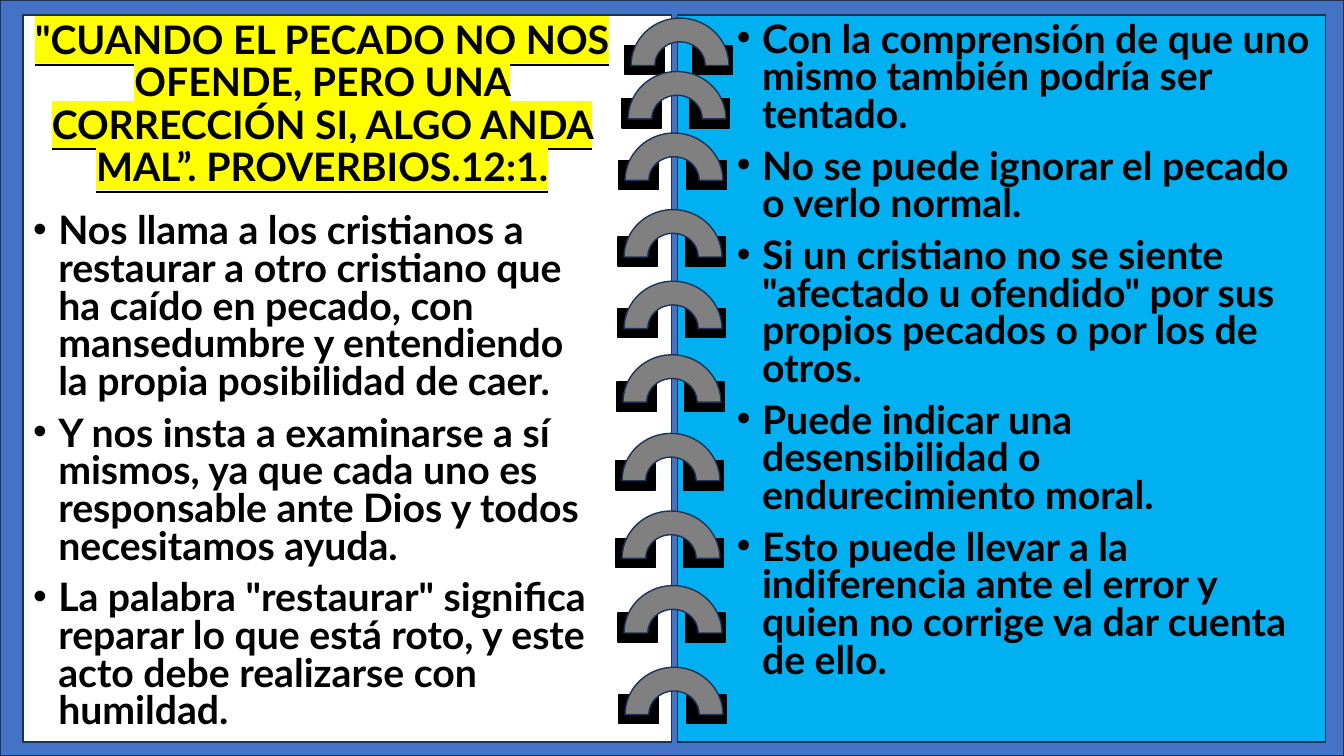
"""Build a slide that looks like an open ring binder with a verse and two bulleted pages."""
from lxml import etree
from pptx import Presentation
from pptx import util as u
from pptx.dml.color import RGBColor
from pptx.enum import shapes, text
from pptx.oxml.ns import qn

COLORS = {
    "cover": "4472C4", "left_page": "FFFFFF", "right_page": "00B0F0",
    "outline": "1E3256", "hole": "000000", "ring": "808080",
    "ink": "000000", "marker": "FFFF00",
}
RECTANGLE = shapes.MSO_SHAPE.RECTANGLE
BLOCK_ARC = shapes.MSO_SHAPE.BLOCK_ARC


def add_panel(parent, kind, left, top, width, height, fill, line="outline"):
    shape = parent.shapes.add_shape(
        kind, u.Inches(left), u.Inches(top), u.Inches(width), u.Inches(height))
    shape.shadow.inherit = False
    shape.fill.solid()
    shape.fill.fore_color.rgb = RGBColor.from_string(COLORS[fill])
    shape.line.color.rgb = RGBColor.from_string(COLORS[line])
    shape.line.width = u.Pt(1)


def add_text(slide, left, top, width, height, lines, spacing, before=0, bullet=None,
             align=text.PP_ALIGN.LEFT, anchor=text.MSO_ANCHOR.TOP,
             underline=None, highlight=None):
    box = slide.shapes.add_textbox(
        u.Inches(left), u.Inches(top), u.Inches(width), u.Inches(height))
    frame = box.text_frame
    frame.word_wrap = True
    frame.vertical_anchor = anchor
    for index, line in enumerate(lines):
        para = frame.add_paragraph() if index else frame.paragraphs[0]
        para.alignment = align
        para.line_spacing = spacing
        para.space_before = u.Pt(before)
        if bullet:
            props = para._p.get_or_add_pPr()
            props.set("marL", str(u.Inches(0.25)))
            props.set("indent", str(u.Inches(-0.25)))
            etree.SubElement(props, qn("a:buFont")).set("typeface", "Arial")
            etree.SubElement(props, qn("a:buChar")).set("char", bullet)
        span = para.add_run()
        span.text = line
        span.font.size = u.Pt(28)
        span.font.bold = True
        span.font.underline = underline
        span.font.color.rgb = RGBColor.from_string(COLORS["ink"])
        if highlight:
            marker = etree.SubElement(span._r.get_or_add_rPr(), qn("a:highlight"))
            etree.SubElement(marker, qn("a:srgbClr")).set("val", COLORS[highlight])
        span.font.name = "Lato"


deck = Presentation()
deck.slide_width = u.Inches(13.33)
deck.slide_height = u.Inches(7.5)
slide = deck.slides.add_slide(deck.slide_layouts[6])

add_panel(slide, RECTANGLE, 0, 0, 13.33, 7.5, "cover")
add_panel(slide, RECTANGLE, 6.72, 0.15, 6.43, 7.21, "right_page")
add_panel(slide, RECTANGLE, 0.23, 0.15, 6.43, 7.21, "left_page")

ring_positions = [
    (6.26, 0.18), (6.19, 2.79), (6.18, 3.52), (6.17, 4.3), (6.17, 5.07),
    (6.19, 5.81), (6.2, 6.62), (6.23, 0.71), (6.2, 1.32), (6.19, 2.08),
]
for left, top in ring_positions:
    ring = slide.shapes.add_group_shape()
    for offset in (0.61, -0.06):
        add_panel(ring, RECTANGLE, left + offset, top + 0.27, 0.39, 0.29, "hole", "hole")
    add_panel(ring, BLOCK_ARC, left, top, 0.97, 0.94, "ring")

add_text(
    slide, 0.23, 0.15, 5.93, 1.79,
    ['"CUANDO EL PECADO NO NOS OFENDE, PERO UNA CORRECCIÓN SI, ALGO ANDA MAL”. '
     'PROVERBIOS.12:1.'],
    spacing=0.9, align=text.PP_ALIGN.CENTER, anchor=text.MSO_ANCHOR.MIDDLE,
    underline=True, highlight="marker")

left_points = [
    "Nos llama a los cristianos a restaurar a otro cristiano que ha caído en pecado, "
    "con mansedumbre y entendiendo la propia posibilidad de caer.",
    "Y nos insta a examinarse a sí mismos, ya que cada uno es responsable ante Dios "
    "y todos necesitamos ayuda.",
    'La palabra "restaurar" significa reparar lo que está roto, y este acto debe '
    "realizarse con humildad.",
]
right_points = [
    "Con la comprensión de que uno mismo también podría ser tentado.",
    "No se puede ignorar el pecado o verlo normal.",
    'Si un cristiano no se siente "afectado u ofendido" por sus propios pecados '
    "o por los de otros.",
    "Puede indicar una desensibilidad o endurecimiento moral.",
    "Esto puede llevar a la indiferencia ante el error y quien no corrige va dar "
    "cuenta de ello.",
]
add_text(slide, 0.23, 2.08, 5.76, 5.28, left_points, spacing=0.8, before=10, bullet="•")
add_text(slide, 7.21, 0.18, 5.91, 7.18, right_points, spacing=0.8, before=10, bullet="•")

deck.save("out.pptx")
